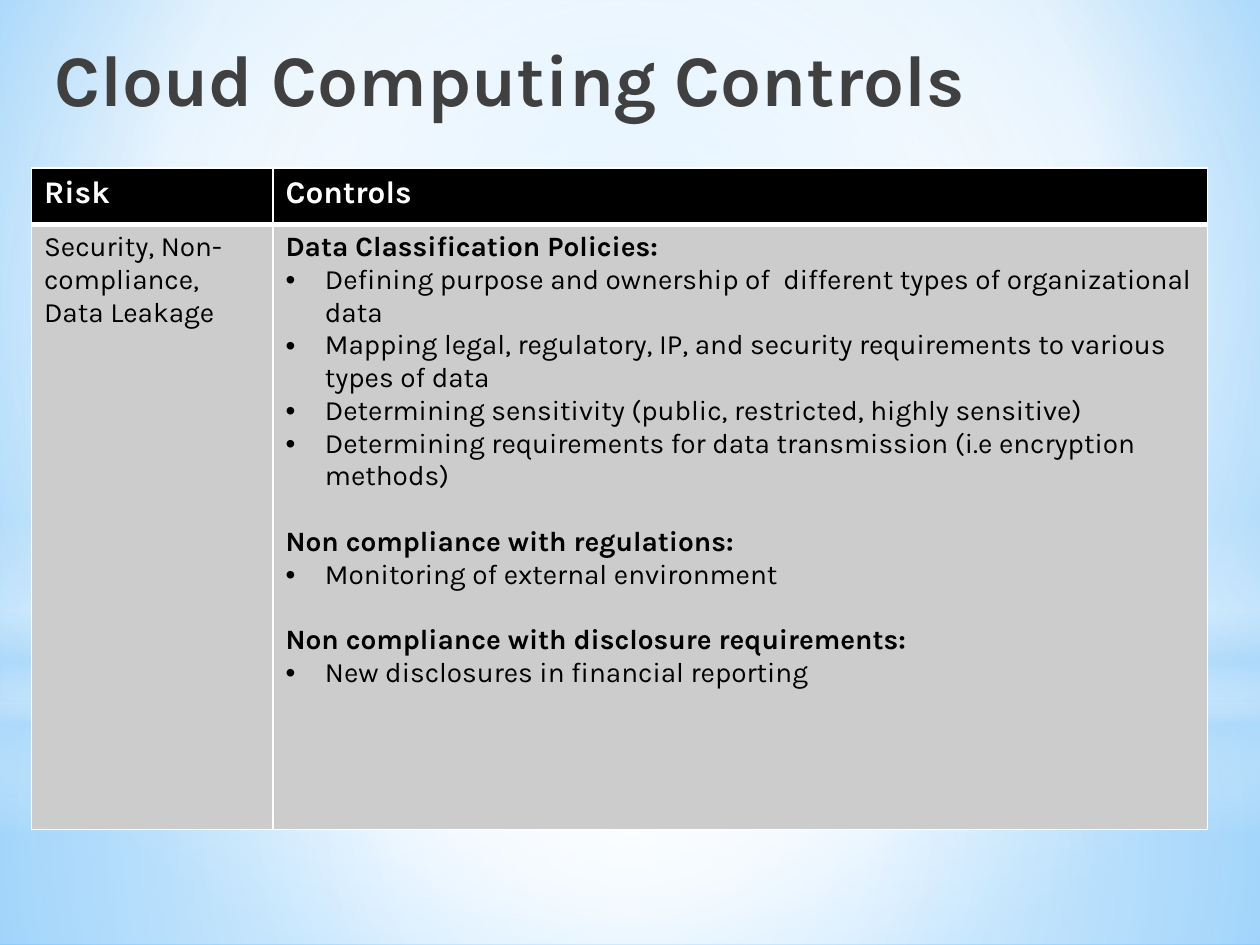
from lxml.etree import SubElement
from pptx import Presentation
from pptx.dml.color import RGBColor
from pptx.enum.shapes import MSO_SHAPE
from pptx.enum.text import MSO_ANCHOR
from pptx.oxml import parse_xml
from pptx.oxml.ns import nsdecls, qn
from pptx.util import Pt

FONT = "Karla"
WHITE, BLACK, SKY, GREY = "FFFFFF", "000000", "B4DCFA", "CCCCCC"
CENTRE = (50, 50, 50, 50)
LINE_GAP = 18.7
POLICIES = [
    ("Data Classification Policies:", [
        "Defining purpose and ownership of  different types of organizational data",
        "Mapping legal, regulatory, IP, and security requirements to various types of data",
        "Determining sensitivity (public, restricted, highly sensitive)",
        "Determining requirements for data transmission (i.e encryption methods)",
    ]),
    ("Non compliance with regulations:", ["Monitoring of external environment"]),
    ("Non compliance with disclosure requirements:", ["New disclosures in financial reporting"]),
]


def color(hex_string):
    return RGBColor.from_string(hex_string)


def gradient(stops, focus=None):
    marks = "".join(
        f'<a:gs pos="{position * 1000}"><a:srgbClr val="{tint}">'
        f'<a:alpha val="{opacity * 1000}"/></a:srgbClr></a:gs>'
        for position, tint, opacity in stops
    )
    if focus:
        left, top, right, bottom = (side * 1000 for side in focus)
        direction = (f'<a:path path="circle"><a:fillToRect l="{left}" t="{top}" '
                     f'r="{right}" b="{bottom}"/></a:path>')
    else:
        direction = '<a:lin ang="5400000" scaled="0"/>'
    return parse_xml(f'<a:gradFill {nsdecls("a")} rotWithShape="1">'
                     f'<a:gsLst>{marks}</a:gsLst>{direction}</a:gradFill>')


def replace_fill(properties, new_fill):
    properties.replace(properties.find(qn("a:solidFill")), new_fill)


def paint_background(slide):
    background = slide.background
    background.fill.solid()
    background.fill.fore_color.rgb = color(WHITE)
    properties = slide.element.find(".//" + qn("p:bgPr"))
    stops = [(0, "9ED5FF", 100), (60, WHITE, 100), (100, "5BB9FF", 100)]
    replace_fill(properties, gradient(stops, (20, 10, 20, 60)))


def add_glow(slide, kind, top, height, stops, focus=None):
    glow = slide.shapes.add_shape(kind, 0, Pt(top), Pt(720), Pt(height))
    glow.shadow.inherit = False
    glow.line.fill.background()
    glow.fill.solid()
    replace_fill(glow.element.spPr, gradient(stops, focus))


def style(paragraph, size, tint, bold):
    font = paragraph.runs[0].font
    font.name, font.size, font.bold = FONT, Pt(size), bold
    font.color.rgb = color(tint)


def add_title(slide, text):
    title = slide.shapes.add_textbox(Pt(24), Pt(12), Pt(540), Pt(90))
    frame = title.text_frame
    frame.word_wrap = True
    frame.vertical_anchor = MSO_ANCHOR.TOP
    frame.margin_top, frame.margin_right = Pt(7.6), 0
    frame.text = text
    style(frame.paragraphs[0], 41.4, "404040", True)


def format_cell(cell, fill, bottom_width):
    cell.fill.solid()
    cell.fill.fore_color.rgb = color(fill)
    properties = cell._tc.get_or_add_tcPr()
    widths = {"lnL": 1, "lnR": 1, "lnT": 1, "lnB": bottom_width}
    for index, (side, width) in enumerate(widths.items()):
        border = parse_xml(f'<a:{side} {nsdecls("a")} w="{Pt(width)}"><a:solidFill>'
                           f'<a:srgbClr val="{WHITE}"/></a:solidFill></a:{side}>')
        properties.insert(index, border)


def add_bullet(paragraph):
    properties = paragraph._p.get_or_add_pPr()
    properties.set("marL", str(Pt(22.5)))
    properties.set("indent", str(-Pt(22.5)))
    SubElement(properties, qn("a:buFont")).set("typeface", "Arial")
    SubElement(properties, qn("a:buChar")).set("char", "•")


def fill_controls(frame):
    for number, (heading, measures) in enumerate(POLICIES):
        policy = frame.add_paragraph() if number else frame.paragraphs[0]
        policy.text = heading
        style(policy, 16, BLACK, True)
        if number:
            policy.space_before = Pt(LINE_GAP)
        for measure in measures:
            control = frame.add_paragraph()
            control.text = measure
            style(control, 16, BLACK, False)
            add_bullet(control)


def add_risk_table(slide):
    table = slide.shapes.add_table(2, 2, Pt(18), Pt(96), Pt(672), Pt(378)).table
    for column, width in zip(table.columns, (138, 534)):
        column.width = Pt(width)
    for row, height in zip(table.rows, (32.4, 345.6)):
        row.height = Pt(height)
    for column, heading in enumerate(("Risk", "Controls")):
        header = table.cell(0, column)
        header.text_frame.text = heading
        style(header.text_frame.paragraphs[0], 18, WHITE, True)
        format_cell(header, BLACK, 3)
        format_cell(table.cell(1, column), GREY, 1)
    risk = table.cell(1, 0).text_frame
    risk.text = "Security, Non-compliance, Data Leakage"
    style(risk.paragraphs[0], 16, BLACK, False)
    fill_controls(table.cell(1, 1).text_frame)


def main():
    deck = Presentation()
    deck.slide_width, deck.slide_height = Pt(720), Pt(540)
    slide = deck.slides.add_slide(deck.slide_layouts[6])
    paint_background(slide)
    add_glow(slide, MSO_SHAPE.RECTANGLE, 402, 138,
             [(0, WHITE, 91), (37, WHITE, 76), (100, SKY, 79)], CENTRE)
    add_glow(slide, MSO_SHAPE.RECTANGLE, 0, 402,
             [(0, WHITE, 89), (48, WHITE, 62), (100, SKY, 79)], CENTRE)
    add_glow(slide, MSO_SHAPE.RECTANGLE, 297, 180,
             [(0, WHITE, 0), (29, WHITE, 30), (45, SKY, 40),
              (55, WHITE, 26), (65, SKY, 60), (100, WHITE, 0)])
    add_glow(slide, MSO_SHAPE.OVAL, 126, 402,
             [(0, WHITE, 100), (56, WHITE, 0)], CENTRE)
    add_title(slide, "Cloud Computing Controls")
    add_risk_table(slide)
    deck.save("out.pptx")


if __name__ == "__main__":
    main()
